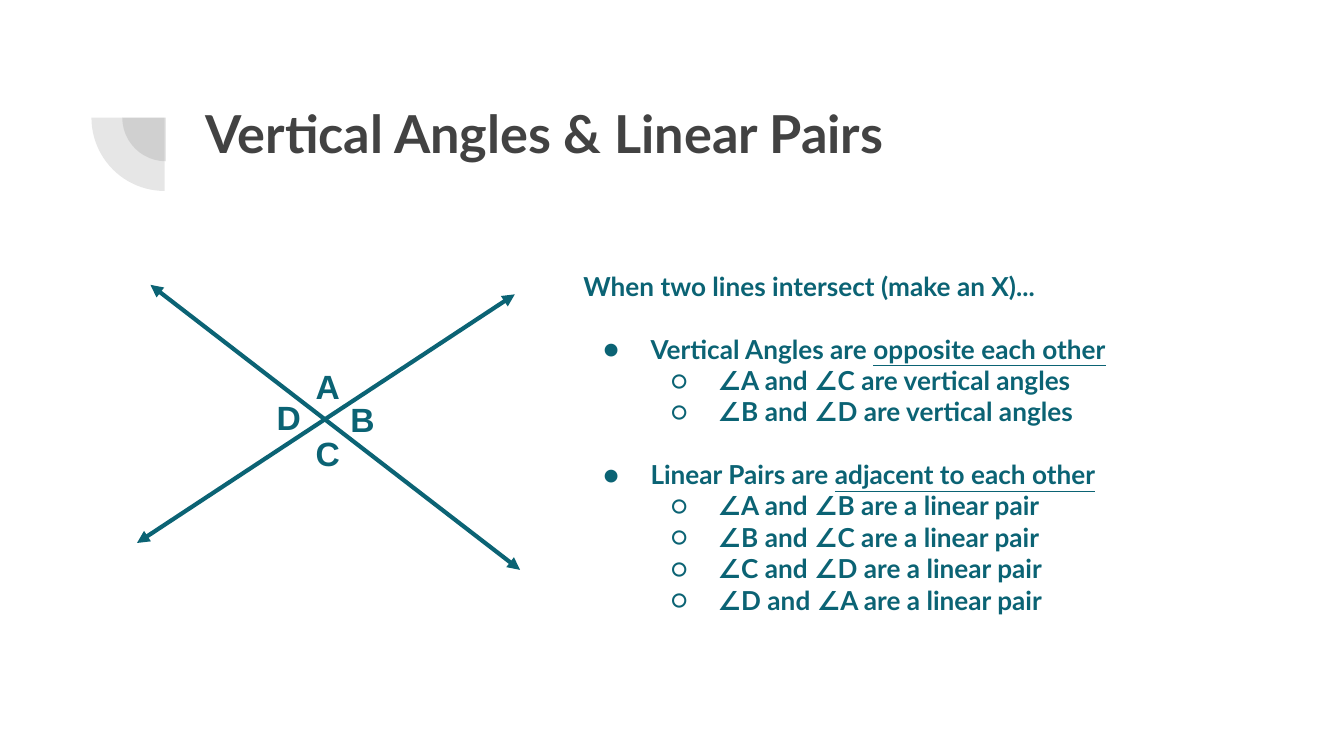
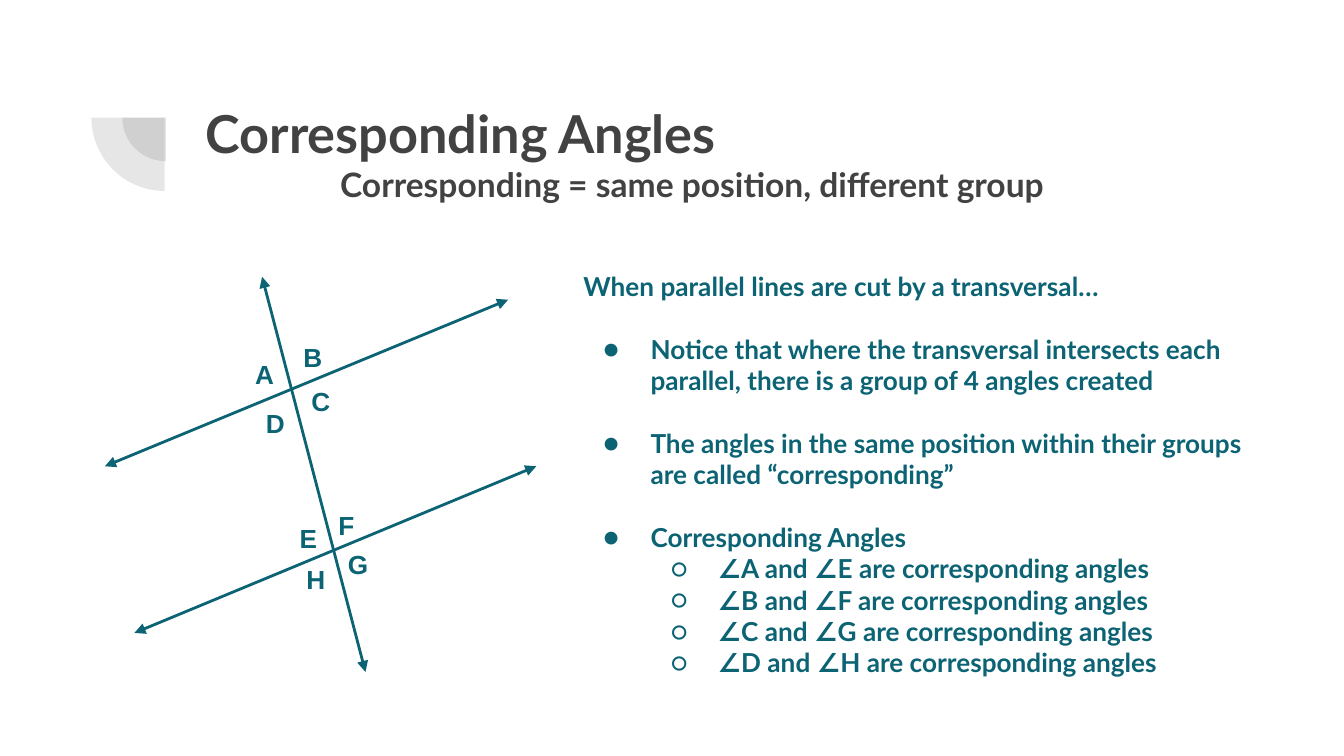
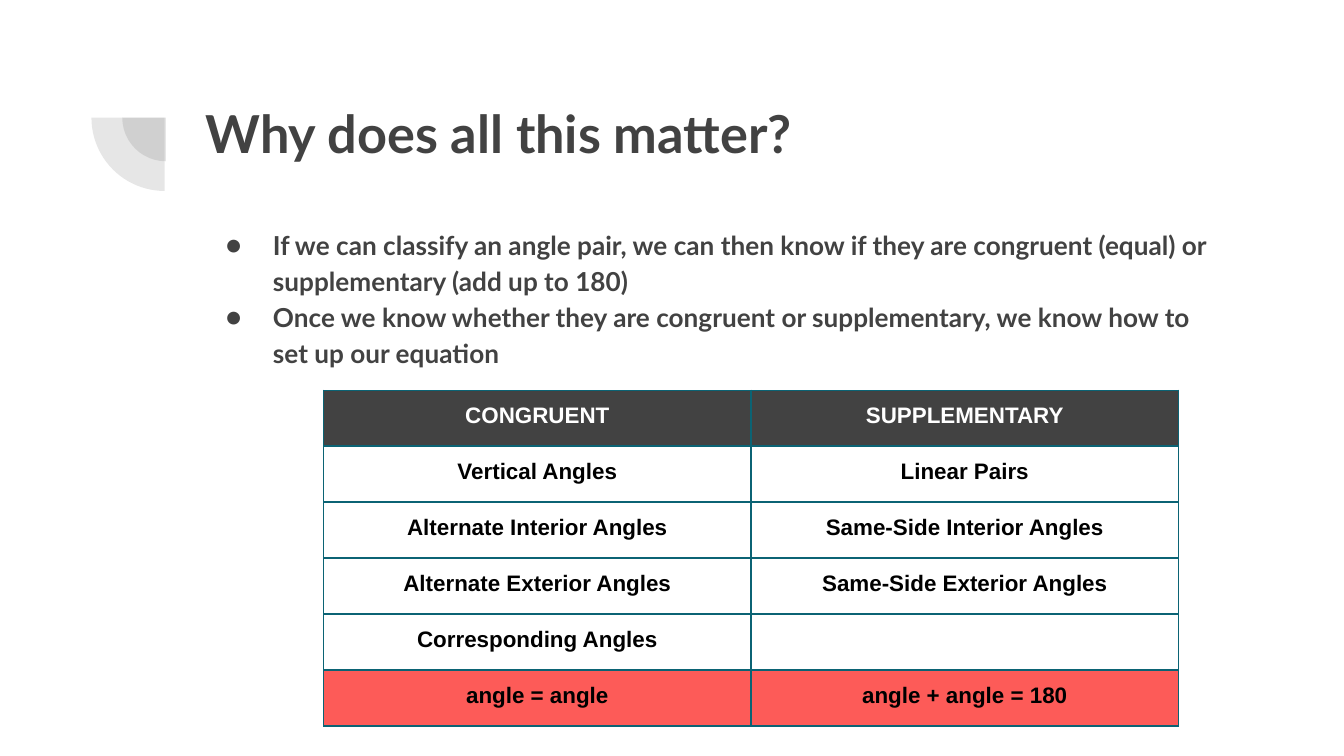
import lxml.etree
import pptx
import pptx.dml.color
import pptx.enum.shapes
import pptx.enum.text
import pptx.oxml.ns
import pptx.util

Pt = pptx.util.Pt
qn = pptx.oxml.ns.qn

# Shared look
TEAL, GRAY, RED, WHITE, BLACK = "0B6374", "424242", "FD5B58", "FFFFFF", "000000"
INSET = 7.2
TITLE_BOX = (103, 46.8, 553.7, 78.5)
PIES = [(65.5, 39.6, 46.8), (49, 23.8, 78.5)]  # left, top, size
HEADING = {"size": Pt(28), "name": "Lato", "bold": True}
SUBHEADING = {**HEADING, "size": Pt(18)}
LIST_TEXT = {"size": Pt(14), "name": "Lato", "bold": True}
CELL_TEXT = {"size": Pt(12), "name": "Arial", "bold": True}
# List styles: level, left indent, bullet
LIST_STYLES = {"lead": (0, 0, None), "point": (0, 36, "●"), "sub": (1, 72, "○")}
HANGING = 25.2


def rgb(color):
    return pptx.dml.color.RGBColor.from_string(color)


def add_xml(parent, tag, **attributes):
    return lxml.etree.SubElement(parent, qn(tag), attributes)


def add_run(paragraph, text, text_format, color, underline=False):
    run = paragraph.add_run()
    run.text = text
    for name, value in text_format.items():
        setattr(run.font, name, value)
    run.font.color.rgb = rgb(color)
    if underline:
        run.font.underline = True


def place(shape, box):
    for name, value in zip(("left", "top", "width", "height"), box):
        setattr(shape, name, Pt(value))


def prepare_frame(shape):
    frame = shape.text_frame
    frame_format = {
        "word_wrap": True,
        "auto_size": pptx.enum.text.MSO_AUTO_SIZE.NONE,
        "vertical_anchor": pptx.enum.text.MSO_ANCHOR.TOP,
    }
    for side in ("left", "right", "top", "bottom"):
        frame_format["margin_" + side] = Pt(INSET)
    for name, value in frame_format.items():
        setattr(frame, name, value)
    return frame


def next_paragraph(frame, index):
    return frame.add_paragraph() if index else frame.paragraphs[0]


def set_bullet(paragraph, indent, bullet, color):
    properties = paragraph._p.get_or_add_pPr()
    properties.set("marL", str(Pt(indent)))
    properties.set("indent", str(Pt(-HANGING) if bullet else 0))
    if bullet:
        add_xml(add_xml(properties, "a:buClr"), "a:srgbClr", val=color)
        add_xml(properties, "a:buFont", typeface="Lato")
        add_xml(properties, "a:buChar", char=bullet)
    else:
        add_xml(properties, "a:buNone")


def add_corner_pies(slide):
    for left, top, size in PIES:
        pie = slide.shapes.add_shape(
            pptx.enum.shapes.MSO_SHAPE.PIE, Pt(left), Pt(top), Pt(size), Pt(size))
        pie.adjustments[0], pie.adjustments[1] = 108, 162
        pie.rotation = 270
        pie.shadow.inherit = False
        pie.line.fill.background()
        pie.fill.solid()
        pie.fill.fore_color.rgb = rgb(GRAY)
        add_xml(pie._element.spPr.find(".//" + qn("a:srgbClr")), "a:alpha", val="13000")


def add_titled_slide(presentation, title, subtitle=None):
    slide = presentation.slides.add_slide(presentation.slide_layouts[1])
    add_corner_pies(slide)
    place(slide.shapes.title, TITLE_BOX)
    frame = prepare_frame(slide.shapes.title)
    lines = [(title, HEADING, 0)]
    if subtitle:
        lines.append((subtitle, SUBHEADING, 72))
    for index, (text, text_format, indent) in enumerate(lines):
        paragraph = next_paragraph(frame, index)
        paragraph.alignment = pptx.enum.text.PP_ALIGN.LEFT
        set_bullet(paragraph, indent, None, GRAY)
        add_run(paragraph, text, text_format, GRAY)
    return slide


def fill_list(slide, box, items, color=TEAL, gap=16.8, spacing=1.0):
    """Each item is (style, text) or (style, text, underlined ending)."""
    body = slide.placeholders[1]
    place(body, box)
    frame = prepare_frame(body)
    for index, (style, text, *underlined) in enumerate(items):
        level, indent, bullet = LIST_STYLES[style]
        paragraph = next_paragraph(frame, index)
        paragraph_format = {
            "level": level,
            "alignment": pptx.enum.text.PP_ALIGN.LEFT,
            "line_spacing": spacing,
            "space_before": Pt(gap if style == "point" else 0),
        }
        for name, value in paragraph_format.items():
            setattr(paragraph, name, value)
        set_bullet(paragraph, indent, bullet, color)
        add_run(paragraph, text, LIST_TEXT, color)
        for ending in underlined:
            add_run(paragraph, ending, LIST_TEXT, color, underline=True)


def add_double_arrow(slide, ends, width):
    arrow = slide.shapes.add_connector(
        pptx.enum.shapes.MSO_CONNECTOR.STRAIGHT, *[Pt(value) for value in ends])
    arrow.line.color.rgb = rgb(TEAL)
    arrow.line.width = Pt(width)
    properties = arrow._element.spPr
    for tag in ("a:headEnd", "a:tailEnd"):
        add_xml(properties.find(qn("a:ln")), tag, type="triangle")
    add_xml(properties, "a:effectLst")


def add_angle_letters(slide, positions, size, box_size):
    for letter, position in positions.items():
        label = slide.shapes.add_textbox(0, 0, 0, 0)
        place(label, position + box_size)
        paragraph = prepare_frame(label).paragraphs[0]
        add_run(paragraph, letter, {**CELL_TEXT, "size": Pt(size)}, TEAL)


def set_borders(cell):
    properties = cell._tc.get_or_add_tcPr()
    for index, side in enumerate("LRTB"):
        border = lxml.etree.Element(qn("a:ln" + side), w=str(Pt(0.75)))
        add_xml(add_xml(border, "a:solidFill"), "a:srgbClr", val=TEAL)
        properties.insert(index, border)


def add_pair_table(slide, rows, left, top, column_width, row_height):
    table = slide.shapes.add_table(
        len(rows), 2, Pt(left), Pt(top),
        Pt(2 * column_width), Pt(row_height * len(rows))).table
    table.first_row = table.horz_banding = False
    row_looks = {0: (GRAY, WHITE), len(rows) - 1: (RED, BLACK)}
    for row_index, texts in enumerate(rows):
        table.rows[row_index].height = Pt(row_height)
        fill, color = row_looks.get(row_index, (None, BLACK))
        for column_index, text in enumerate(texts):
            cell = table.cell(row_index, column_index)
            for side in ("left", "right", "top", "bottom"):
                setattr(cell, "margin_" + side, Pt(INSET))
            if fill:
                cell.fill.solid()
                cell.fill.fore_color.rgb = rgb(fill)
            else:
                cell.fill.background()
            set_borders(cell)
            paragraph = cell.text_frame.paragraphs[0]
            paragraph.alignment = pptx.enum.text.PP_ALIGN.CENTER
            if text:
                add_run(paragraph, text, CELL_TEXT, color)
            else:  # keeps the empty row at its height
                add_xml(paragraph._p, "a:endParaRPr", sz="1200")


def build_vertical_angles(presentation):
    slide = add_titled_slide(presentation, "Vertical Angles & Linear Pairs")
    for ends in [(80.6, 152.6, 278.6, 305.3), (73.4, 290.9, 275.8, 157.7)]:
        add_double_arrow(slide, ends, 2.25)
    add_angle_letters(slide, {
        "A": (162, 188.6), "B": (180.7, 206.6),
        "C": (162, 224.6), "D": (141.1, 205.2),
    }, 18, (43.2, 36))
    fill_list(slide, (305.3, 137.5, 377.3, 198), [
        ("lead", "When two lines intersect (make an X)..."),
        ("point", "Vertical Angles are ", "opposite each other"),
        *[("sub", f"∠{a} and ∠{b} are vertical angles") for a, b in ("AC", "BD")],
        ("point", "Linear Pairs are ", "adjacent to each other"),
        *[("sub", f"∠{a} and ∠{b} are a linear pair")
          for a, b in ("AB", "BC", "CD", "DA")],
    ])


def build_corresponding_angles(presentation):
    slide = add_titled_slide(presentation, "Corresponding Angles",
                             "Corresponding = same position, different group")
    parallels = [(56.2, 249.8, 272.2, 160.6), (72, 339.1, 287.3, 249.8)]
    transversal = (140.4, 148.3, 195.8, 360)
    for ends in [*parallels, transversal]:
        add_double_arrow(slide, ends, 1.5)
    add_angle_letters(slide, {
        "A": (129.6, 185), "B": (155.5, 175.7),
        "C": (159.8, 199.4), "D": (135.4, 211),
        "E": (153.4, 272.9), "F": (174.2, 265.7),
        "G": (179.3, 286.6), "H": (157, 294.5),
    }, 14, (41, 33.8))
    fill_list(slide, (305.3, 137.5, 377.3, 231.8), [
        ("lead", "When parallel lines are cut by a transversal…"),
        ("point", "Notice that where the transversal intersects each parallel, "
                  "there is a group of 4 angles created"),
        ("point", "The angles in the same position within their groups "
                  "are called “corresponding”"),
        ("point", "Corresponding Angles"),
        *[("sub", f"∠{a} and ∠{b} are corresponding angles")
          for a, b in zip("ABCD", "EFGH")],
    ])


def build_why_it_matters(presentation):
    slide = add_titled_slide(presentation, "Why does all this matter?")
    fill_list(slide, (103, 113, 553.7, 200.2), [
        ("point", "If we can classify an angle pair, we can then know if they are "
                  "congruent (equal) or supplementary (add up to 180)"),
        ("point", "Once we know whether they are congruent or supplementary, "
                  "we know how to set up our equation"),
    ], color=GRAY, gap=0, spacing=1.15)
    add_pair_table(slide, [
        ("CONGRUENT", "SUPPLEMENTARY"),
        ("Vertical Angles", "Linear Pairs"),
        ("Alternate Interior Angles", "Same-Side Interior Angles"),
        ("Alternate Exterior Angles", "Same-Side Exterior Angles"),
        ("Corresponding Angles", ""),
        ("angle = angle", "angle + angle = 180"),
    ], left=173.4, top=209, column_width=229, row_height=30)


def main():
    presentation = pptx.Presentation()
    presentation.slide_width, presentation.slide_height = Pt(720), Pt(405)
    build_vertical_angles(presentation)
    build_corresponding_angles(presentation)
    build_why_it_matters(presentation)
    presentation.save("out.pptx")


if __name__ == "__main__":
    main()
